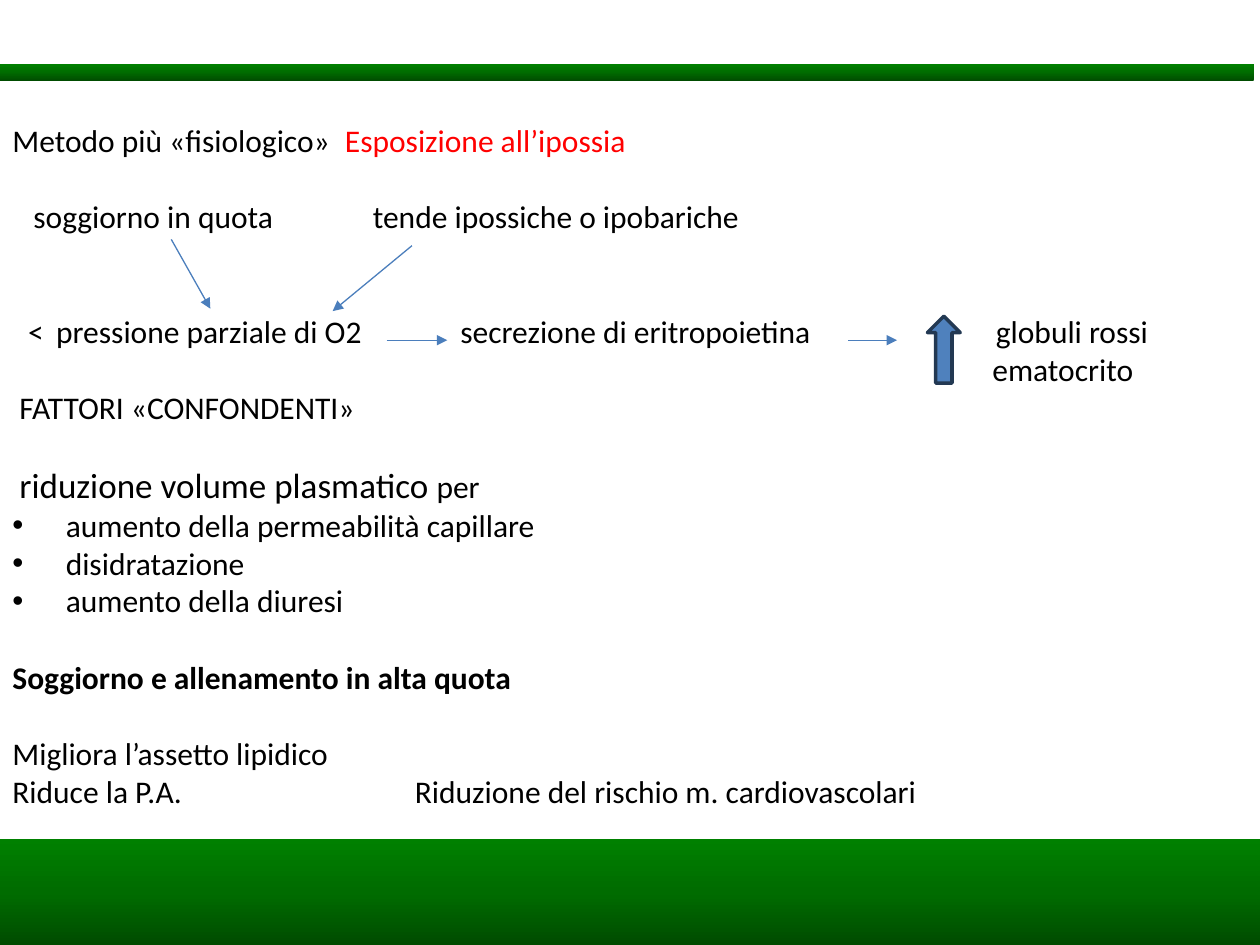
"""Build the slide on hypoxia exposure and its effects."""
from copy import deepcopy

from pptx import Presentation
from pptx.dml.color import RGBColor
from pptx.enum.shapes import MSO_CONNECTOR, MSO_SHAPE
from pptx.oxml.ns import qn
from pptx.oxml.xmlchemy import OxmlElement
from pptx.util import Pt

BLACK = RGBColor(0, 0, 0)
RED = RGBColor(0xFF, 0, 0)
BLUE = RGBColor(0x4F, 0x81, 0xBD)
NAVY = RGBColor(0x23, 0x39, 0x53)
LINE = RGBColor(0x4B, 0x7E, 0xBC)
GREENS = [RGBColor(0, 0x4C, 0), RGBColor(0, 0x6C, 0), RGBColor(0, 0x80, 0)]
FONT, SIZE, ROW = "Calibri", 18, 22

BANDS = [(0, 479.5, 720, 60.5), (-3.6, 36.7, 720, 9.4)]
ROWS = [
    (0, [190], [("Metodo più «fisiologico»\t", {}),
                ("Esposizione all’ipossia", {"color": RED})]),
    (1, [12, 206], [("\tsoggiorno in quota\ttende ipossiche o ipobariche", {})]),
    (2, [9, 25, 256, 562], [("\t<\tpressione parziale di O2"
                             "\tsecrezione di eritropoietina\tglobuli rossi", {})]),
    (0, [560], [("\tematocrito", {})]),
    (0, [4], [("\tFATTORI «CONFONDENTI»", {})]),
    (1, [4], [("\triduzione volume plasmatico ", {"size": 20}), ("per", {})]),
    (0, "•", [("aumento della permeabilità capillare", {})]),
    (0, "•", [("disidratazione", {})]),
    (0, "•", [("aumento della diuresi", {})]),
    (1, [], [("Soggiorno e allenamento in alta quota", {"bold": True})]),
    (1, [], [("Migliora l’assetto lipidico", {})]),
    (0, [230], [("Riduce la P.A.\tRiduzione del rischio m. cardiovascolari", {})]),
]
ARROWS = [
    (97.9, 136.8, 120.2, 176.4),
    (235.4, 140.4, 190.1, 177.8),
    (221, 194.4, 255.6, 194.4),
    (484.6, 194.4, 512.6, 194.4),
]


def node(parent, tag, **attrs):
    item = OxmlElement(tag)
    for key, val in attrs.items():
        item.set(key, str(val))
    parent.append(item)
    return item


def add_band(shapes, box):
    band = shapes.add_shape(MSO_SHAPE.RECTANGLE, *map(Pt, box))
    band.shadow.inherit = False
    band.line.fill.background()
    band.fill.gradient()
    band.fill.gradient_angle = 90
    stops = band._element.spPr.find(".//" + qn("a:gsLst"))
    stops.insert(1, deepcopy(stops[0]))
    for i, (stop, color) in enumerate(zip(band.fill.gradient_stops, GREENS)):
        stop.position = i / 2
        stop.color.rgb = color


def add_row(para, gap, tabs, parts):
    para.space_before = Pt(gap * ROW)
    props = para._p.get_or_add_pPr()
    if tabs == "•":
        props.set("marL", str(Pt(30.5)))
        props.set("indent", str(Pt(-30.5)))
        node(props, "a:buFont", typeface="Arial")
        node(props, "a:buChar", char=tabs)
    elif tabs:
        stops = node(props, "a:tabLst")
        for pos in tabs:
            node(stops, "a:tab", pos=Pt(pos), algn="l")
    for text, style in parts:
        run = para.add_run()
        run.text = text
        font = run.font
        font.name = FONT
        font.size = Pt(style.get("size", SIZE))
        font.bold = style.get("bold", False)
        font.color.rgb = style.get("color", BLACK)


def add_arrow(shapes, ends):
    arrow = shapes.add_connector(MSO_CONNECTOR.STRAIGHT, *map(Pt, ends))
    arrow.line.color.rgb = LINE
    arrow.line.width = Pt(0.75)
    node(arrow.line._get_or_add_ln(), "a:tailEnd", type="triangle")
    node(arrow._element.spPr, "a:effectLst")


def main():
    deck = Presentation()
    deck.slide_width, deck.slide_height = Pt(720), Pt(540)
    shapes = deck.slides.add_slide(deck.slide_layouts[6]).shapes
    for box in BANDS:
        add_band(shapes, box)
    frame = shapes.add_textbox(Pt(0), Pt(65.5), Pt(710), Pt(422)).text_frame
    frame.word_wrap = True
    for i, row in enumerate(ROWS):
        add_row(frame.add_paragraph() if i else frame.paragraphs[0], *row)
    for ends in ARROWS:
        add_arrow(shapes, ends)
    rise = shapes.add_shape(MSO_SHAPE.UP_ARROW, Pt(530), Pt(180.7), Pt(18.7), Pt(38.2))
    rise.shadow.inherit = False
    rise.fill.solid()
    rise.fill.fore_color.rgb = BLUE
    rise.line.color.rgb = NAVY
    rise.line.width = Pt(2)
    deck.save("out.pptx")


if __name__ == "__main__":
    main()
